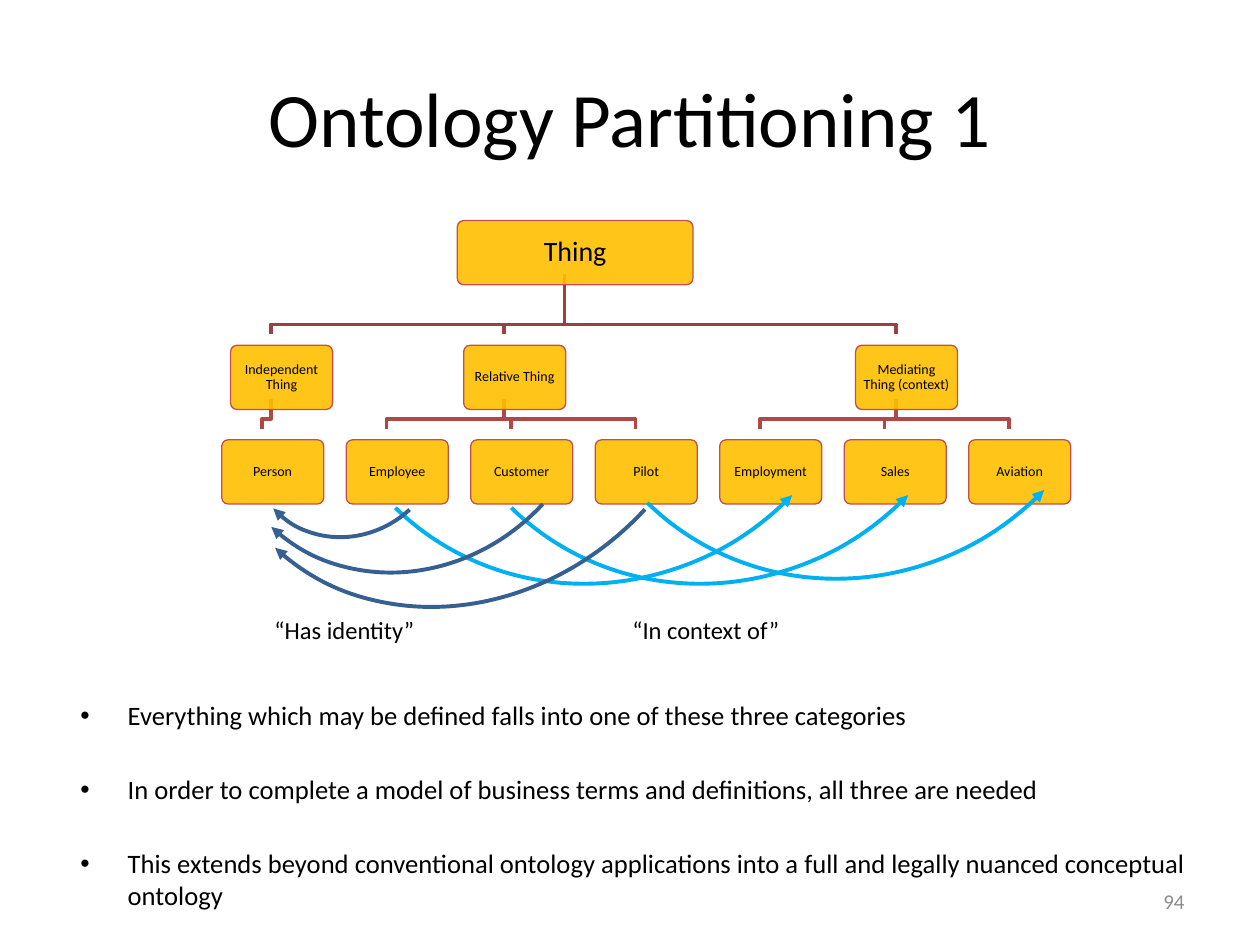
from lxml import etree
from pptx import Presentation
from pptx.dml.color import RGBColor
from pptx.enum.shapes import MSO_SHAPE
from pptx.enum.text import MSO_ANCHOR, PP_ALIGN
from pptx.oxml.ns import qn
from pptx.util import Inches, Pt

ROUND, ARC = MSO_SHAPE.ROUNDED_RECTANGLE, MSO_SHAPE.ARC
LEFT, MID, RIGHT = PP_ALIGN.LEFT, PP_ALIGN.CENTER, PP_ALIGN.RIGHT
TOP, CENTER = MSO_ANCHOR.TOP, MSO_ANCHOR.MIDDLE
FONT = "Calibri"
GOLD, RED, BLACK, GRAY = "FFC000", "C0504D", "000000", "8C8C8C"
SKY, NAVY = "00B0F0", "376092"
ROOT, UPPER, LOWER = 1.75, 2.74, 3.49
WIDE, SMALL, HIGH = 1.87, 0.81, 0.51
COL, STEP, GAP = 1.76, 0.988, 0.085
HANG = 0.375
TREE = [
    ("Independent Thing", 1.83, ["Person"]),
    ("Relative Thing", 3.68, ["Employee", "Customer", "Pilot"]),
    ("Mediating Thing (context)", 6.79, ["Employment", "Sales", "Aviation"]),
]
ARCS = [
    ((4.55, 0.09, 4.36, 4.55), 44.4, SKY),
    ((2.55, 0.13, 4.36, 4.55), 44.4, SKY),
    ((3.47, 0.13, 4.36, 4.55), 44.4, SKY),
    ((1.96, 2.76, 1.58, 1.48), 137.4, NAVY),
    ((1.64, 1.55, 3.19, 2.92), 132.7, NAVY),
    ((1.47, 0.77, 4.43, 3.9), 132.7, NAVY),
]
POINTS = [
    "Everything which may be defined falls into one of these three categories",
    "In order to complete a model of business terms and definitions, all three are needed",
    "This extends beyond conventional ontology applications into a full and "
    "legally nuanced conceptual ontology",
]


def tint(form, hue):
    """Give a fill or font colour format a solid hex colour."""
    form.rgb = RGBColor.from_string(hue)


def write(para, text, size, hue=BLACK, align=LEFT):
    """Add one run of text to a paragraph."""
    para.alignment = align
    run = para.add_run()
    run.text = text
    run.font.name, run.font.size = FONT, Pt(size)
    tint(run.font.color, hue)


def frame(slide, box, anchor=TOP):
    """Add a wrapping text box and return its text frame."""
    body = slide.shapes.add_textbox(*map(Inches, box)).text_frame
    body.word_wrap, body.vertical_anchor = True, anchor
    return body


def label(slide, box, text, size, hue=BLACK, align=LEFT, anchor=TOP):
    """Add a text box with one line."""
    write(frame(slide, box, anchor).paragraphs[0], text, size, hue, align)


def stroke(shape, hue, width):
    """Set the outline of a shape and drop its shadow."""
    shape.shadow.inherit = False
    tint_line = shape.line
    tint_line.fill.solid()
    tint(tint_line.color, hue)
    tint_line.width = Pt(width)


def node(slide, left, top, width, text, size, pad):
    """Add a rounded, slightly transparent box of the tree."""
    box = slide.shapes.add_shape(ROUND, *map(Inches, (left, top, width, HIGH)))
    box.adjustments[0] = 0.1
    box.fill.solid()
    tint(box.fill.fore_color, GOLD)
    tone = box.fill._xPr.find(qn("a:solidFill"))[0]
    etree.SubElement(tone, qn("a:alpha"), val="90000")
    stroke(box, RED, 0.75)
    body = box.text_frame
    body.word_wrap, body.vertical_anchor = True, CENTER
    body.margin_left = body.margin_right = Inches(pad)
    body.margin_top = body.margin_bottom = Inches(pad)
    para = body.paragraphs[0]
    para.line_spacing = 0.9
    write(para, text, size, align=MID)


def elbow(slide, start, goal, top, hue):
    """Draw a bent line from a parent's stem down to a child's stem."""
    end = top - GAP
    turn = end - 0.08
    path = slide.shapes.build_freeform(Inches(start[0]), Inches(start[1]), 1)
    spots = [(start[0], turn), (goal, turn), (goal, end)]
    path.add_line_segments([(Inches(x), Inches(y)) for x, y in spots], close=False)
    line = path.convert_to_shape()
    line.fill.background()
    stroke(line, hue, 2)


def stem(left, width=SMALL):
    """Return where the line of a box stands."""
    return left + width / 2 - GAP


def tree(slide):
    """Draw all branch lines, then all boxes over them."""
    base = 3.63
    nodes = [(base, ROOT, WIDE, "Thing", 16, 0.07)]
    col = 0
    for name, left, kids in TREE:
        elbow(slide, (stem(base, WIDE), ROOT + HIGH - GAP), stem(left), UPPER, "9A403E")
        nodes.append((left, UPPER, SMALL, name, 8, 0.045))
        for kid in kids:
            x = COL + col * STEP
            elbow(slide, (stem(left), UPPER + HIGH - GAP), stem(x), LOWER, "AE4946")
            nodes.append((x, LOWER, SMALL, kid, 8, 0.045))
            col += 1
    for item in nodes:
        node(slide, *item)


def arc(slide, box, turn, hue):
    """Add a curved arrow; the sky ones are mirrored top to bottom."""
    bow = slide.shapes.add_shape(ARC, *map(Inches, box))
    bow.rotation = turn
    if hue == SKY:
        bow._element.spPr.find(qn("a:xfrm")).set("flipV", "1")
    bow.fill.background()
    stroke(bow, hue, 2.25)
    etree.SubElement(bow.line._get_or_add_ln(), qn("a:tailEnd"), type="triangle")


def bullets(slide, box, lines):
    """Add a bulleted list with hanging indents."""
    body = frame(slide, box)
    for i, text in enumerate(lines):
        para = body.add_paragraph() if i else body.paragraphs[0]
        para.space_before = Pt(24 if i else 0)
        props = para._p.get_or_add_pPr()
        props.set("marL", str(Inches(HANG)))
        props.set("indent", str(-Inches(HANG)))
        etree.SubElement(props, qn("a:buFont"), typeface="Arial")
        etree.SubElement(props, qn("a:buChar"), char="•")
        write(para, text, 15.2)


def main():
    """Build and save the slide."""
    deck = Presentation()
    deck.slide_width, deck.slide_height = Inches(10), Inches(7.5)
    slide = deck.slides.add_slide(deck.slide_layouts[6])
    label(slide, (0.5, 0.3, 9, 1.25), "Ontology Partitioning 1", 44, align=MID, anchor=CENTER)
    label(slide, (7.17, 6.95, 2.33, 0.4), "94", 12, GRAY, RIGHT, CENTER)
    tree(slide)
    for item in ARCS:
        arc(slide, *item)
    label(slide, (2.08, 4.83, 2.83, 0.5), "“Has identity”", 14)
    label(slide, (4.92, 4.83, 1.81, 0.5), "“In context of”", 14)
    bullets(slide, (0.54, 5.5, 9, 1.75), POINTS)
    deck.save("out.pptx")


if __name__ == "__main__":
    main()
